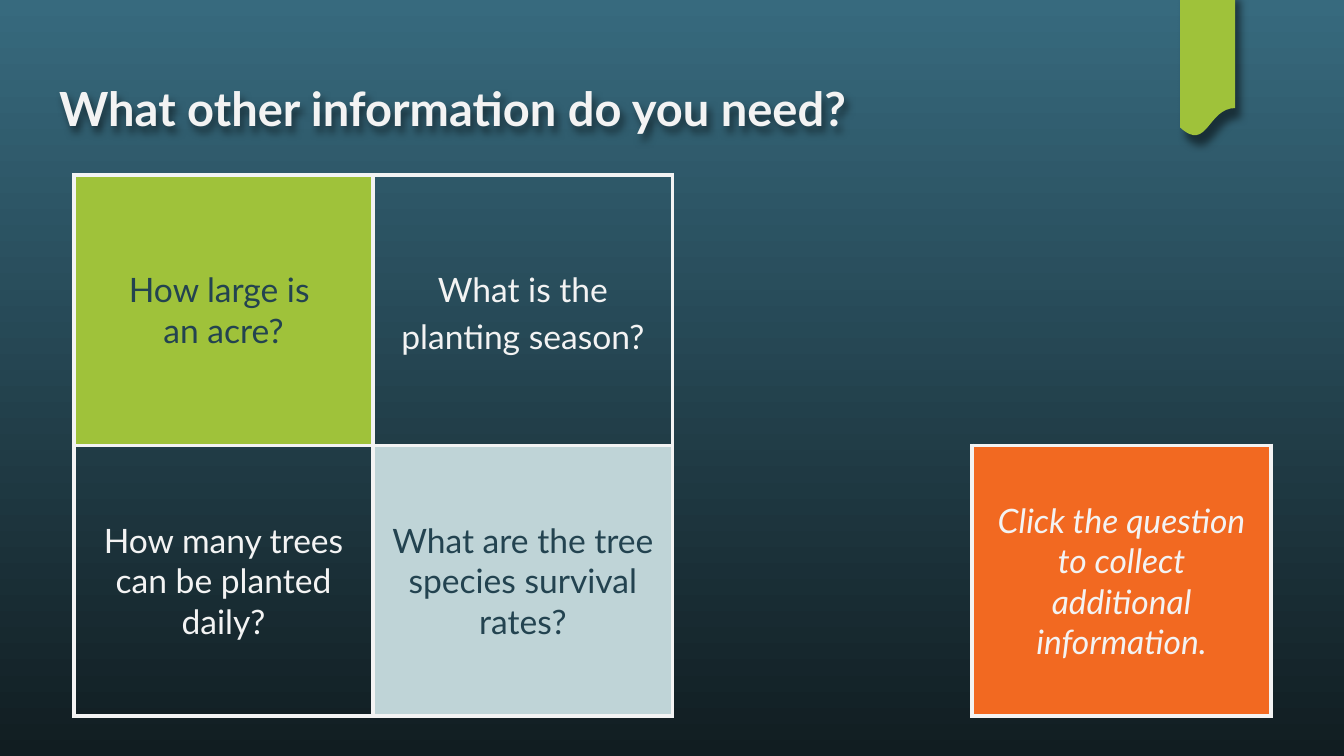
from lxml.etree import SubElement
from pptx import Presentation
from pptx.dml.color import RGBColor
from pptx.enum.shapes import MSO_SHAPE
from pptx.enum.text import MSO_ANCHOR, MSO_AUTO_SIZE, PP_ALIGN
from pptx.oxml import parse_xml
from pptx.oxml.ns import nsdecls, qn
from pptx.util import Inches, Pt

SKY = RGBColor(0x37, 0x6A, 0x7E)
NIGHT = RGBColor(0x11, 0x1D, 0x21)
GREEN = RGBColor(0x9F, 0xC2, 0x3A)
MIST = RGBColor(0xBF, 0xD4, 0xD7)
ORANGE = RGBColor(0xF2, 0x69, 0x21)
TEAL = RGBColor(0x23, 0x43, 0x50)
WHITE = RGBColor(0xF3, 0xF3, 0xF3)
NO_GRID_STYLE = "{2D5ABB26-0587-4C30-8999-92F81FD0307C}"


def add_shadow(shape, blur, distance, angle):
    shape._element.spPr.append(parse_xml(
        f'<a:effectLst {nsdecls("a")}><a:outerShdw blurRad="{Pt(blur)}" '
        f'dist="{Pt(distance)}" dir="{angle * 60000}" algn="bl" rotWithShape="0">'
        '<a:srgbClr val="000000"><a:alpha val="50000"/></a:srgbClr>'
        '</a:outerShdw></a:effectLst>'))


def add_borders(cell, drawn_sides):
    for side in "LRTB":
        line = SubElement(cell._tc.get_or_add_tcPr(), qn(f"a:ln{side}"), w=str(Pt(2.25)))
        if side in drawn_sides:
            fill = SubElement(line, qn("a:solidFill"))
            SubElement(fill, qn("a:srgbClr"), val=str(WHITE))
        else:
            SubElement(line, qn("a:noFill"))


deck = Presentation()
deck.slide_width = Inches(10)
deck.slide_height = Inches(10) * 9 // 16
page = deck.slides.add_slide(deck.slide_layouts[5])

background = page.background.fill
background.gradient()
background.gradient_angle = 270
for stop, color, position in zip(background.gradient_stops, (SKY, NIGHT), (0, 1)):
    stop.color.rgb = color
    stop.position = position

ribbon = page.shapes.add_shape(MSO_SHAPE.FLOWCHART_DOCUMENT, Inches(8.78),
                               Inches(-0.07), Inches(0.41), Inches(1.09))
ribbon.fill.solid()
ribbon.fill.fore_color.rgb = GREEN
ribbon.line.fill.background()
add_shadow(ribbon, 4.5, 6, 61)

title = page.shapes.title
title.left, title.top = Inches(0.34), Inches(0.49)
title.width, title.height = Inches(9.32), Inches(0.63)
title.fill.background()
add_shadow(title, 4.5, 3, 61)
frame = title.text_frame
frame.text = "What other information do you need?"
frame.auto_size = MSO_AUTO_SIZE.NONE
frame.vertical_anchor = MSO_ANCHOR.TOP
frame.margin_left = frame.margin_right = Inches(0.1)
frame.margin_top = frame.margin_bottom = Inches(0.1)
heading = frame.paragraphs[0]
heading.alignment = PP_ALIGN.LEFT
heading.font.name = "Lato"
heading.font.size = Pt(25.2)
heading.font.bold = True
heading.font.color.rgb = WHITE

table = page.shapes.add_table(2, 4, Inches(0.55), Inches(1.3),
                              Inches(8.91), Inches(4.03)).table
table._tbl.tblPr.find(qn("a:tableStyleId")).text = NO_GRID_STYLE
table.first_row = False
table.horz_banding = False

questions = [
    (0, 0, "How large is \van acre?", TEAL, GREEN),
    (0, 1, "What is the planting season?", WHITE, None),
    (1, 0, "How many trees can be planted daily?", WHITE, None),
    (1, 1, "What are the tree species survival rates?", TEAL, MIST),
    (1, 3, "Click the question to collect additional information.", WHITE, ORANGE),
]
for row, column, text, color, fill in questions:
    cell = table.cell(row, column)
    add_borders(cell, "LRTB")
    if fill:
        cell.fill.solid()
        cell.fill.fore_color.rgb = fill
    else:
        cell.fill.background()
    cell.text = text
    cell.vertical_anchor = MSO_ANCHOR.MIDDLE
    cell.margin_left = cell.margin_right = Inches(0.1)
    cell.margin_top = cell.margin_bottom = Inches(0.1)
    para = cell.text_frame.paragraphs[0]
    para.alignment = PP_ALIGN.CENTER
    para.font.name = "Lato"
    para.font.size = Pt(18)
    para.font.color.rgb = color
    para.font.italic = fill == ORANGE

season = table.cell(0, 1).text_frame.paragraphs[0]
season.line_spacing = 1.15
season.space_after = Pt(12)

for row, column, sides in [(0, 2, "L"), (0, 3, "B"), (1, 2, "LR")]:
    cell = table.cell(row, column)
    add_borders(cell, sides)
    cell.fill.background()

deck.save("out.pptx")
